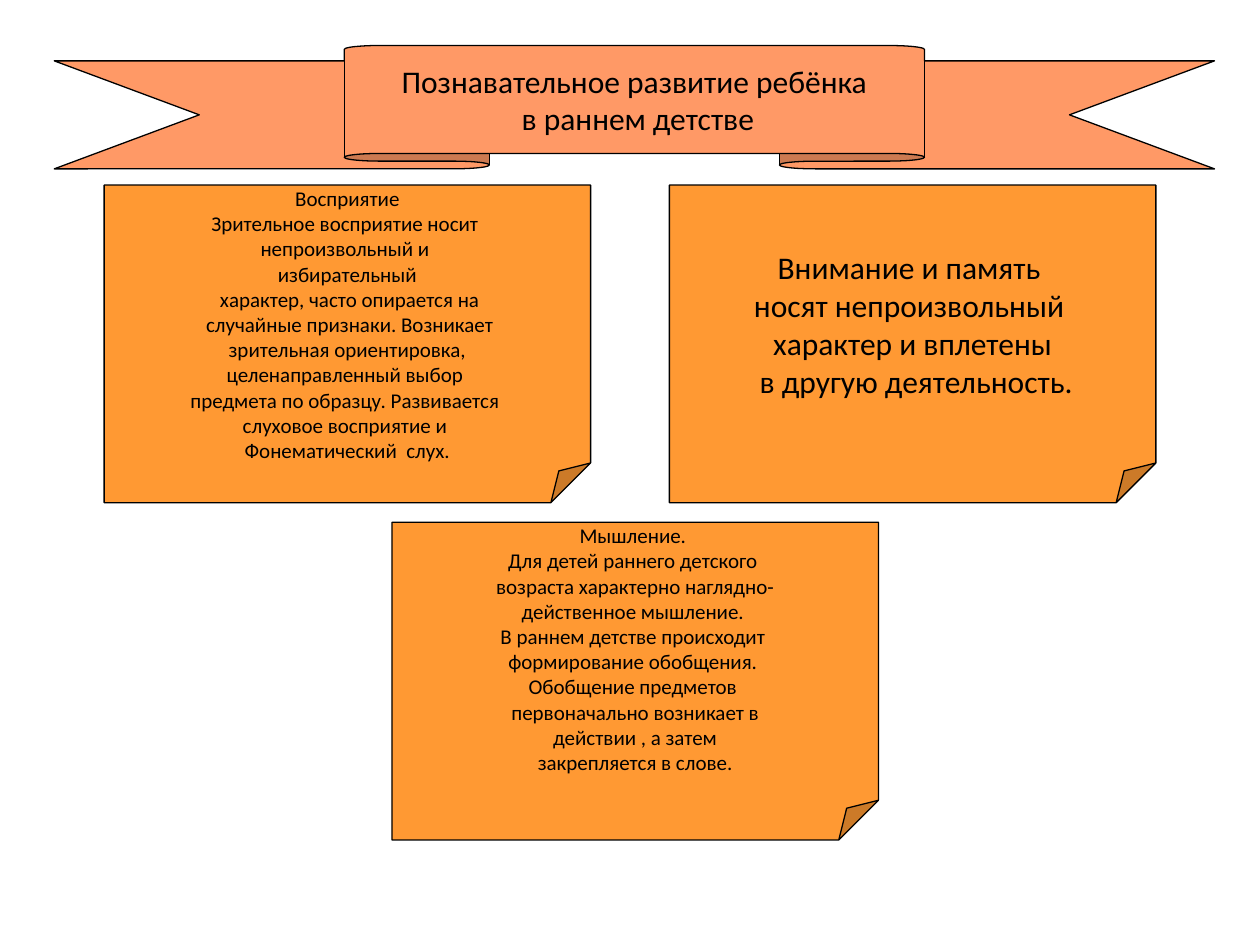
from lxml import etree
from pptx import Presentation
from pptx.dml.color import RGBColor
from pptx.enum import shapes, text
from pptx.oxml import ns
from pptx.util import Pt

BLACK = RGBColor(0x00, 0x00, 0x00)
SALMON = RGBColor(0xFF, 0x99, 0x66)
ORANGE = RGBColor(0xFF, 0x99, 0x33)

CARD_W, CARD_H = 278, 181.5
TOP_ROW, BOTTOM_ROW = 105.75, 298.5

TITLE = ["Познавательное развитие ребёнка", " в раннем детстве"]
PERCEPTION = [
    "Восприятие",
    "Зрительное восприятие носит ",
    "непроизвольный и ",
    "избирательный",
    " характер, часто опирается на",
    " случайные признаки. Возникает",
    " зрительная ориентировка, ",
    "целенаправленный выбор ",
    "предмета по образцу. Развивается ",
    "слуховое восприятие и ",
    "Фонематический  слух.",
]
THINKING = [
    "Мышление. ",
    "Для детей раннего детского ",
    "возраста характерно наглядно-",
    "действенное мышление. ",
    "В раннем детстве происходит ",
    "формирование обобщения. ",
    "Обобщение предметов ",
    "первоначально возникает в",
    " действии , а затем ",
    "закрепляется в слове.",
]
ATTENTION = [
    "Внимание и память ",
    "носят непроизвольный ",
    "характер и вплетены",
    " в другую деятельность.",
]


class SlideBuilder:
    font = "Calibri"
    line_width = 0.75

    def __init__(self, slide):
        self.slide = slide

    def adjust(self, s, adjustments):
        guides = s._element.xpath("./p:spPr/a:prstGeom/a:avLst")[0]
        for guide in list(guides):
            guides.remove(guide)
        for name, value in adjustments.items():
            etree.SubElement(guides, ns.qn("a:gd"), name=name,
                             fmla=f"val {round(value * 100000)}")

    def shape(self, kind, box, adjustments, fill, lines, size):
        s = self.slide.shapes.add_shape(kind, *map(Pt, box))
        self.adjust(s, adjustments)
        s.shadow.inherit = False
        s.fill.solid()
        s.fill.fore_color.rgb = fill
        s.line.color.rgb = BLACK
        s.line.width = Pt(self.line_width)
        tf = s.text_frame
        tf.word_wrap = False
        tf.vertical_anchor = text.MSO_ANCHOR.MIDDLE
        tf.text = "\n".join(lines)
        for p in tf.paragraphs:
            p.alignment = text.PP_ALIGN.CENTER
            p.font.name = self.font
            p.font.size = Pt(size)
            p.font.color.rgb = BLACK
        return s

    def ribbon(self, box, lines):
        return self.shape(shapes.MSO_SHAPE.UP_RIBBON, box,
                          {"adj1": 0.125, "adj2": 0.5}, SALMON, lines, 18)

    def card(self, left, top, lines, size=12):
        return self.shape(shapes.MSO_SHAPE.FOLDED_CORNER,
                          (left, top, CARD_W, CARD_H), {"adj": 0.125},
                          ORANGE, lines, size)


def main():
    prs = Presentation()
    prs.slide_width, prs.slide_height = Pt(720), Pt(540)
    builder = SlideBuilder(prs.slides.add_slide(prs.slide_layouts[6]))

    builder.ribbon((31, 26, 663, 70.5), TITLE)
    builder.card(59.5, TOP_ROW, PERCEPTION)
    thinking = builder.card(224, BOTTOM_ROW, THINKING)
    thinking.text_frame.margin_bottom = Pt(18)
    builder.card(382.5, TOP_ROW, ATTENTION, size=18)

    prs.save("out.pptx")


if __name__ == "__main__":
    main()
